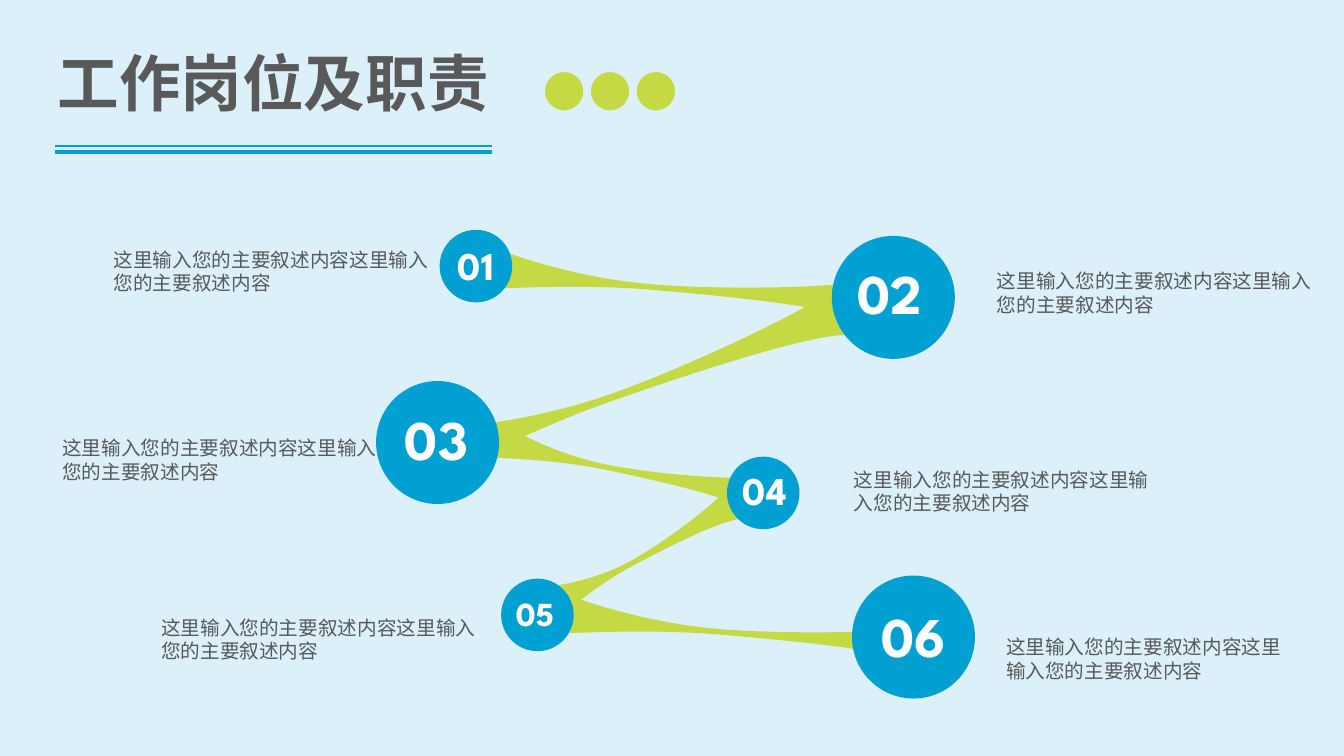
"""Build the slide of six job roles linked by tapered bands, on a grid of 0.1 inch cells."""
from collections import namedtuple
from pptx import Presentation
from pptx.dml.color import RGBColor as Rgb
from pptx.enum.shapes import MSO_CONNECTOR as Conn, MSO_SHAPE as Kind
from pptx.enum.text import MSO_ANCHOR as Anchor, MSO_AUTO_SIZE as Auto, PP_ALIGN as Align
from pptx.oxml.ns import qn
from pptx.util import Inches, Pt
from lxml.etree import SubElement as Sub

Theme = namedtuple("Theme", "sky blue lime grey white han spartan title body")
look = Theme(*map(Rgb.from_string, ("DBF0F9", "00A0D2", "C5D945", "595959", "FFFFFF")),
             "Noto Sans CJK SC", "League Spartan", 44, 14)
cell = Inches(0.1)

deck = Presentation()
deck.slide_width, deck.slide_height = Inches(13.33), Inches(7.5)
slide = deck.slides.add_slide(deck.slide_layouts[5])
slide.background.fill.solid()
slide.background.fill.fore_color.rgb = look.sky
shapes = slide.shapes


def write(box, text, size, face, color, bold=False, wrap=True, **para):
    frame = box.text_frame
    form = {"word_wrap": wrap, "auto_size": Auto.NONE, "vertical_anchor": Anchor.TOP}
    for key, val in form.items():
        setattr(frame, key, val)
    line = frame.paragraphs[0]
    for key, val in para.items():
        setattr(line, key, val)
    run = line.add_run()
    run.text = text
    for key, val in {"size": Pt(size), "name": face, "bold": bold}.items():
        setattr(run.font, key, val)
    run.font.color.rgb = color
    Sub(run.font._element, qn("a:ea")).set("typeface", face)


def paint(shape, color, edge=None):
    shape.shadow.inherit = False
    shape.fill.solid()
    shape.fill.fore_color.rgb = color
    if edge is None:
        shape.line.fill.background()
    else:
        shape.line.color.rgb, shape.line.width = edge, Pt(5)


title = shapes.title
spot = {"left": 4.7, "top": 4, "width": 45.3, "height": 8.4}
for key, val in spot.items():
    setattr(title, key, int(val * cell))
write(title, "工作岗位及职责", look.title, look.han, look.grey, True, False, alignment=Align.LEFT)

for row, width in ((14.5, 1), (15.1, 3)):
    rule = shapes.add_connector(Conn.STRAIGHT, *(int(v * cell) for v in (48.75, row, 5.45, row)))
    rule.line.color.rgb, rule.line.width = look.blue, Pt(width)
    Sub(rule._element.spPr, qn("a:effectLst"))

dots = shapes.add_group_shape().shapes
for col in range(3):
    dot = dots.add_shape(Kind.OVAL, *(int(v * cell) for v in (53.7 + 4.55 * col, 6.8, 4.5, 4.5)))
    paint(dot, look.lime, look.sky)

taper = [(0, 0), (0.11, 0.28), (0.26, 0.54), (0.42, 0.54), (0.59, 0.54), (0.89, 0.27), (1, 0),
         (1, 1), (0.9, 0.7), (0.58, 0.69), (0.42, 0.69), (0.25, 0.7), (0.09, 0.9), (0, 1)]
bands = [
    (56.6, 60.7, 34.9, 3.6, 4.9),
    (53.2, 53.1, 21.1, 3.5, 331.9),
    (49, 44.6, 26.2, 3.5, 11.8),
    (49.9, 26.5, 34.9, 3.6, 4.9),
    (42.5, 35.6, 41.9, 4.6, 340.9),
]
links = shapes.add_group_shape().shapes
for left, top, wide, high, angle in bands:
    trace = [(int((left + x * wide) * cell), int((top + y * high) * cell)) for x, y in taper]
    pen = links.build_freeform(*trace[0])
    pen.add_line_segments(trace[1:], close=True)
    band = pen.convert_to_shape()
    band.rotation = angle
    paint(band, look.lime)
    sides = list(band._element.iter(qn("a:lnTo")))
    for first in (0, 3, 7, 10):
        curve = sides[first]
        for side in sides[first + 1:first + 3]:
            curve.append(side[0])
            side.getparent().remove(side)
        curve.tag = qn("a:cubicBezTo")

roles = [
    ("01", 43.6, 22.8, 7.2, (42.4, 24.3, 9.6, 4.8), 28, (10.3, 24.1, 33.3)),
    ("02", 82.5, 23.4, 12.2, (81.9, 26.4, 12.8, 6.4), 40, (97.9, 26.2, 33.3)),
    ("03", 37.3, 37.8, 12.2, (36.9, 40.9, 12.8, 6.4), 40, (5.2, 42.8, 33.3)),
    ("04", 72.1, 45.3, 7.2, (71.1, 46.7, 9.5, 4.8), 28, (83.7, 45.9, 31.8)),
    ("05", 49.7, 57.4, 7.2, (48.3, 59.1, 9.5, 4.2), 24, (15, 60.6, 33.3)),
    ("06", 84.5, 57.1, 12.2, (84.2, 60.5, 12.8, 6.4), 40, (98.8, 62.5, 31)),
]
for num, left, top, wide, area, size, note in roles:
    badge = shapes.add_group_shape().shapes
    disc = badge.add_shape(Kind.OVAL, *(int(v * cell) for v in (left, top, wide, wide)))
    paint(disc, look.blue)
    label = badge.add_textbox(*(int(v * cell) for v in area))
    write(label, num, size, look.spartan, look.white, True, alignment=Align.CENTER, line_spacing=0.8)
    body = shapes.add_textbox(*(int(v * cell) for v in (*note, 5.7)))
    write(body, "这里输入您的主要叙述内容" * 2, look.body, look.han, look.grey)

deck.save("out.pptx")
